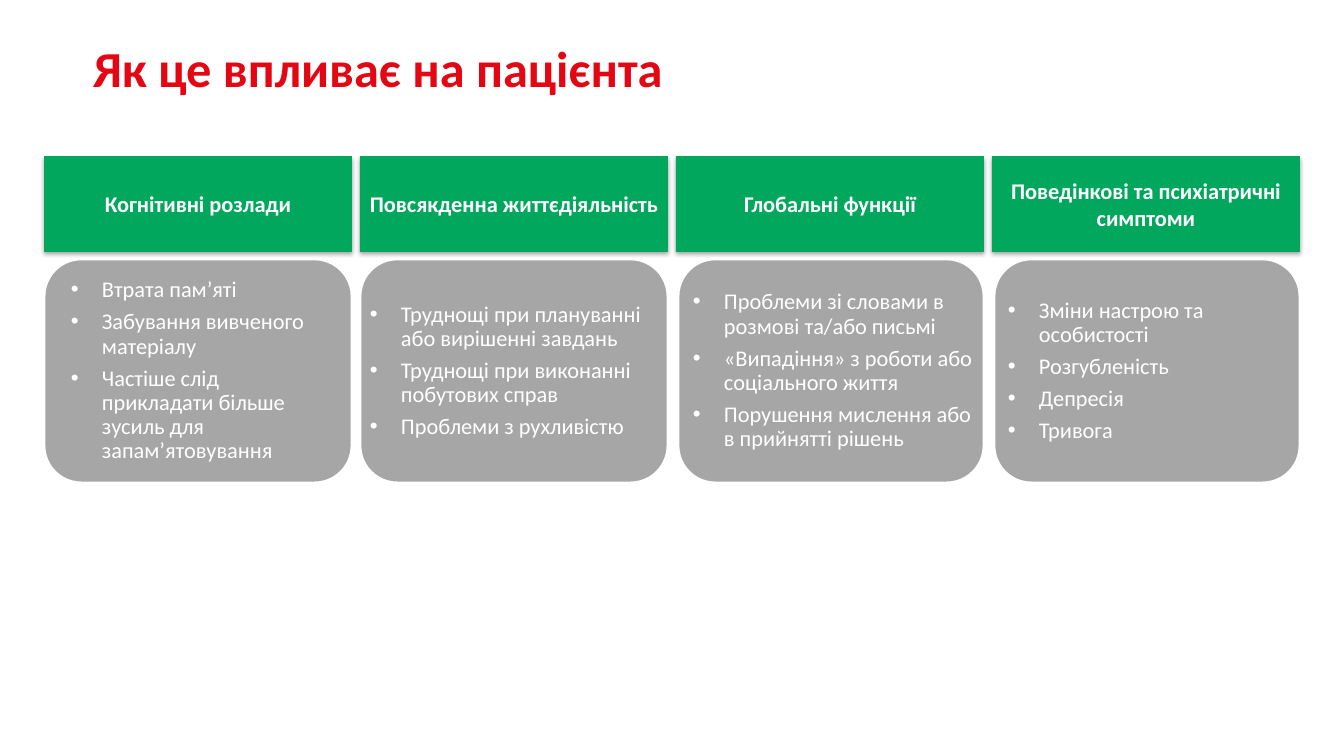
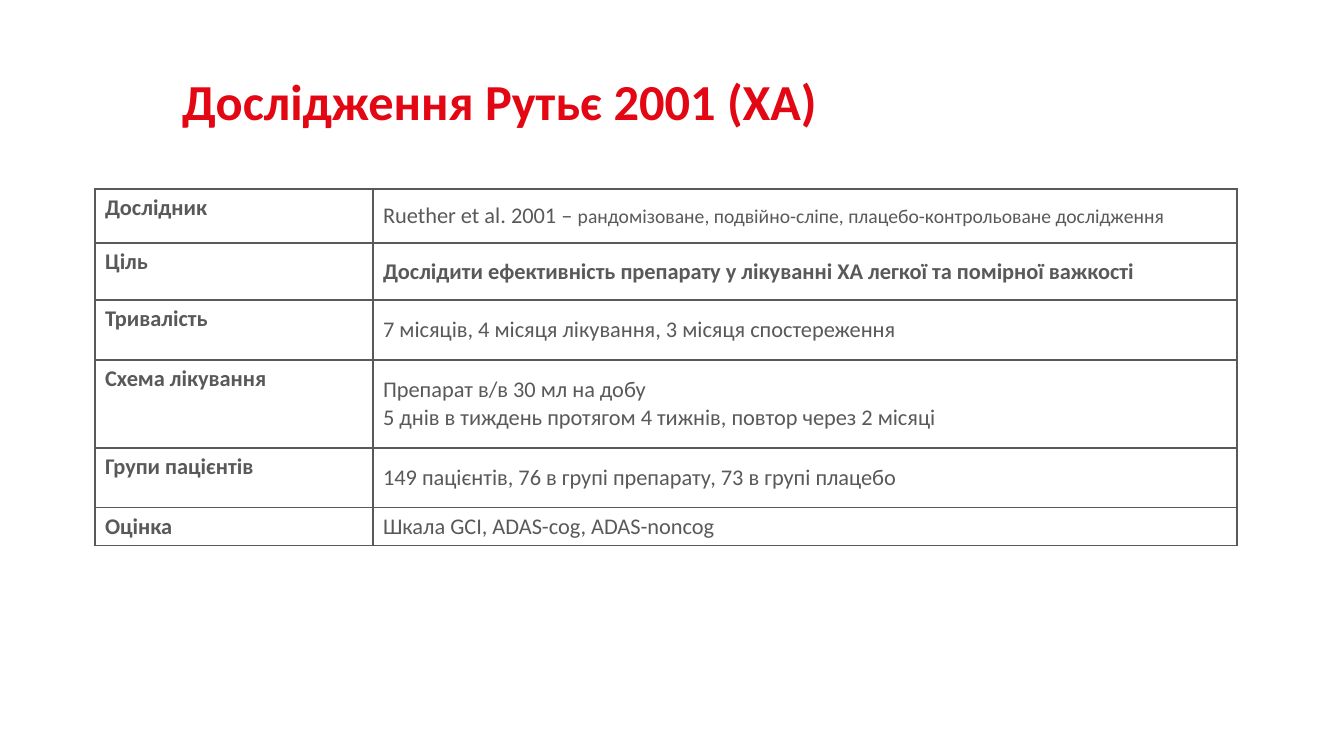
import lxml.etree
import pptx
import pptx.dml.color
import pptx.enum.shapes
import pptx.enum.text
import pptx.oxml.ns
import pptx.util

PX = 914400 / 100.8
FONT = "Calibri"
RED = pptx.dml.color.RGBColor(0xE3, 0x06, 0x13)
GREEN = pptx.dml.color.RGBColor(0x00, 0xA7, 0x5C)
GREY = pptx.dml.color.RGBColor(0xA6, 0xA6, 0xA6)
DARK = pptx.dml.color.RGBColor(0x59, 0x59, 0x59)
WHITE = pptx.dml.color.RGBColor(0xFF, 0xFF, 0xFF)

SHAPE = pptx.enum.shapes.MSO_SHAPE
ALIGN = pptx.enum.text.PP_ALIGN
ANCHOR = pptx.enum.text.MSO_ANCHOR
TITLE_ONLY = 5

# heading, card left and width, list left and width, list items
IMPACTS = [
    ("Когнітивні розлади", (44, 308), (71, 255),
     ["Втрата пам’яті", "Забування вивченого матеріалу",
      "Частіше слід прикладати більше зусиль для запам’ятовування"]),
    ("Повсякденна життєдіяльність", (360, 308), (370, 298),
     ["Труднощі при плануванні або вирішенні завдань",
      "Труднощі при виконанні побутових справ", "Проблеми з рухливістю"]),
    ("Глобальні функції", (678, 306), (693, 284),
     ["Проблеми зі словами в розмові та/або письмі",
      "«Випадіння» з роботи або соціального життя",
      "Порушення мислення або в прийнятті рішень"]),
    ("Поведінкові та психіатричні симптоми", (994, 306), (1008, 291),
     ["Зміни настрою та особистості", "Розгубленість", "Депресія", "Тривога"]),
]

# row height, label, lines of (text, format) spans
STUDY_ROWS = [
    (54, "Дослідник",
     [[("Ruether et al. 2001 – ", {}),
       ("рандомізоване, подвійно-сліпе, плацебо-контрольоване дослідження",
        {"size": pptx.util.Pt(14)})]]),
    (57, "Ціль",
     [[("Дослідити ефективність препарату у лікуванні ХА легкої та помірної важкості",
        {"bold": True})]]),
    (60, "Тривалість",
     [[("7 місяців, 4 місяця лікування, 3 місяця спостереження", {})]]),
    (88, "Схема лікування",
     [[("Препарат в/в 30 мл на добу", {})],
      [("5 днів в тиждень протягом 4 тижнів, повтор через 2 місяці", {})]]),
    (60, "Групи пацієнтів",
     [[("149 пацієнтів, 76 в групі препарату, 73 в групі плацебо", {})]]),
    (37, "Оцінка", [[("Шкала GCI, ADAS-cog, ADAS-noncog", {})]]),
]


def px(length):
    return pptx.util.Emu(round(length * PX))


def place(*lengths):
    return [px(length) for length in lengths]


def set_attributes(target, values):
    for name, value in values.items():
        setattr(target, name, value)


def add_element(parent, tag, **attributes):
    return lxml.etree.SubElement(parent, pptx.oxml.ns.qn(tag), attributes)


def write_span(para, text, color, **formats):
    span = para.add_run()
    span.text = text
    base = {"name": FONT, "size": pptx.util.Pt(16), "bold": False}
    set_attributes(span.font, {**base, **formats})
    span.font.color.rgb = color


def get_paragraph(frame, index):
    return frame.add_paragraph() if index else frame.paragraphs[0]


def set_frame(frame, vertical_margin):
    set_attributes(frame, {
        "word_wrap": True, "vertical_anchor": ANCHOR.MIDDLE,
        "margin_left": 0, "margin_right": 0,
        "margin_top": px(vertical_margin), "margin_bottom": px(vertical_margin),
    })


def add_page(deck, title, left, top, width, height):
    page = deck.slides.add_slide(deck.slide_layouts[TITLE_ONLY])
    box = page.shapes.title
    box.left, box.top, box.width, box.height = place(left, top, width, height)
    set_attributes(box.text_frame, {
        "word_wrap": True, "vertical_anchor": ANCHOR.MIDDLE,
        "auto_size": pptx.enum.text.MSO_AUTO_SIZE.NONE,
    })
    para = box.text_frame.paragraphs[0]
    para.alignment = ALIGN.LEFT
    write_span(para, title, RED, size=pptx.util.Pt(36), bold=True)
    return page


def add_panel(shapes, kind, box, fill):
    panel = shapes.add_shape(kind, *place(*box))
    panel.shadow.inherit = False
    panel.fill.solid()
    panel.fill.fore_color.rgb = fill
    return panel


def add_soft_shadow(panel):
    effects = panel._element.spPr.find(pptx.oxml.ns.qn("a:effectLst"))
    shadow = add_element(effects, "a:outerShdw", blurRad="40000", dist="23000",
                         dir="5400000", rotWithShape="0")
    black = add_element(shadow, "a:srgbClr", val="000000")
    add_element(black, "a:alpha", val="35000")


def add_headings(page, left, top, width, height, gap):
    group = page.shapes.add_group_shape()
    for index, (heading, *_) in enumerate(IMPACTS):
        box = (left + index * (width + gap), top, width, height)
        panel = add_panel(group.shapes, SHAPE.RECTANGLE, box, GREEN)
        panel.line.fill.background()
        add_soft_shadow(panel)
        set_frame(panel.text_frame, 5)
        para = panel.text_frame.paragraphs[0]
        para.alignment = ALIGN.CENTER
        write_span(para, heading, WHITE, bold=True)


def add_bullet(para, indent):
    properties = para._p.get_or_add_pPr()
    properties.set("marL", str(px(indent)))
    properties.set("indent", str(-px(indent)))
    add_element(properties, "a:buFont", typeface="Arial")
    add_element(properties, "a:buChar", char="•")


def add_bullet_card(page, top, height, card_span, list_span, items):
    """Draw a rounded card; each span is a left edge and a width."""
    left, width = card_span
    card = add_panel(page.shapes, SHAPE.ROUNDED_RECTANGLE,
                     (left, top, width, height), GREY)
    card.line.color.rgb = WHITE
    card.line.width = pptx.util.Pt(2)
    inset = 11
    left, width = list_span
    box = page.shapes.add_textbox(
        *place(left, top + inset, width, height - 2 * inset))
    set_frame(box.text_frame, 4)
    for index, item in enumerate(items):
        para = get_paragraph(box.text_frame, index)
        add_bullet(para, 31)
        set_attributes(para, {"line_spacing": 0.9,
                              "space_after": pptx.util.Pt(5.6)})
        write_span(para, item, WHITE)


def frame_cell(cell):
    properties = cell._tc.get_or_add_tcPr()
    for side in "LRTB":
        line = add_element(properties, f"a:ln{side}", w="12700")
        fill = add_element(line, "a:solidFill")
        add_element(fill, "a:srgbClr", val=str(DARK))
    cell.fill.background()


def add_study_table(page, left, top, column_widths):
    height = sum(row[0] for row in STUDY_ROWS)
    table = page.shapes.add_table(
        len(STUDY_ROWS), len(column_widths),
        *place(left, top, sum(column_widths), height)).table
    set_attributes(table, {"first_row": False, "horz_banding": False})
    for column, width in zip(table.columns, column_widths):
        column.width = px(width)
    for row, (row_height, label, lines) in zip(table.rows, STUDY_ROWS):
        row.height = px(row_height)
        label_cell, detail_cell = row.cells
        frame_cell(label_cell)
        frame_cell(detail_cell)
        write_span(label_cell.text_frame.paragraphs[0], label, DARK, bold=True)
        detail_cell.vertical_anchor = ANCHOR.MIDDLE
        for index, spans in enumerate(lines):
            para = get_paragraph(detail_cell.text_frame, index)
            for text, formats in spans:
                write_span(para, text, DARK, **formats)


def build_impact_page(deck):
    page = add_page(deck, "Як це впливає на пацієнта", 83, 4, 1196, 126)
    add_headings(page, 44, 156, 308, 96, 8)
    for _, card_span, list_span, items in IMPACTS:
        add_bullet_card(page, 259, 224, card_span, list_span, items)


def build_study_page(deck):
    page = add_page(deck, "Дослідження Рутьє 2001 (ХА)", 172, 37, 898, 126)
    add_study_table(page, 95, 189, [278, 864])


def main():
    deck = pptx.Presentation()
    deck.slide_width, deck.slide_height = place(1344, 756)
    build_impact_page(deck)
    build_study_page(deck)
    deck.save("out.pptx")


if __name__ == "__main__":
    main()
